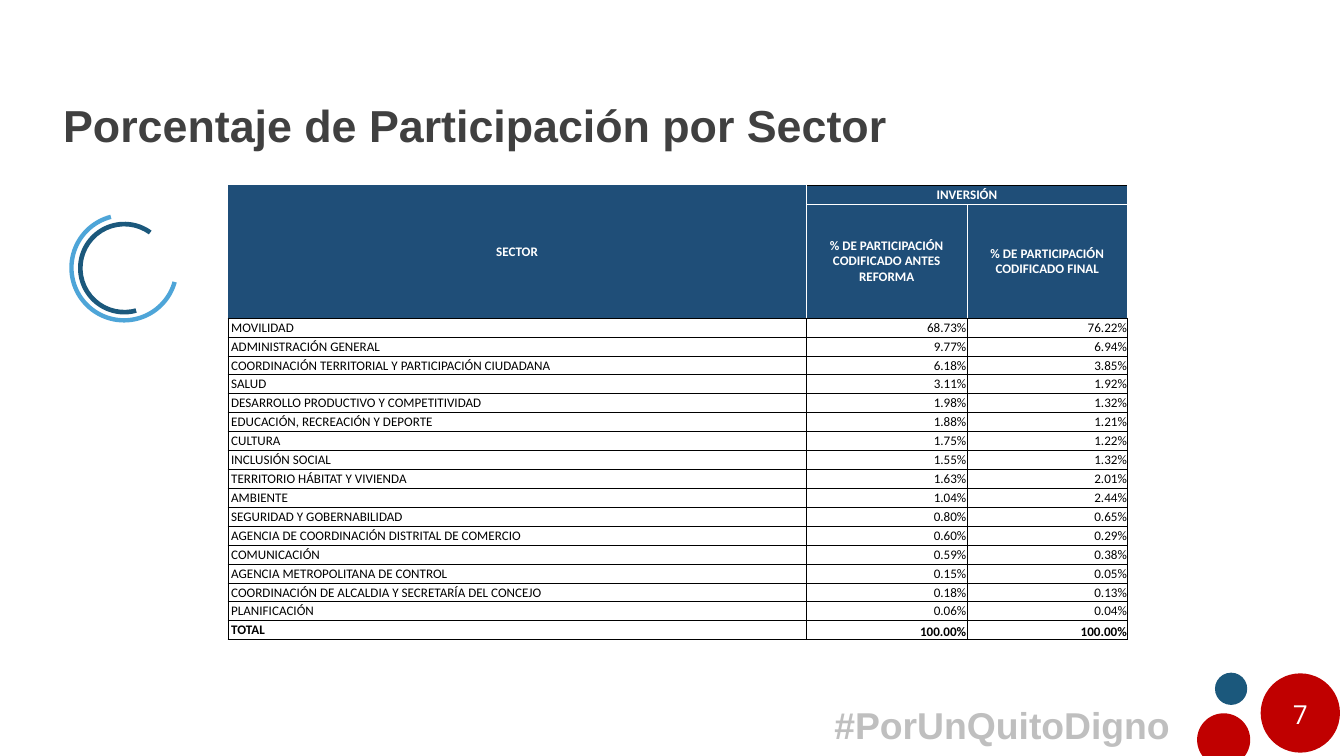
from dataclasses import dataclass
from math import asin, cos, pi, sin

from lxml.etree import SubElement
from pptx import Presentation
from pptx.dml.color import RGBColor
from pptx.enum.shapes import MSO_SHAPE
from pptx.enum.text import MSO_ANCHOR, MSO_AUTO_SIZE, PP_ALIGN
from pptx.oxml.ns import qn
from pptx.util import Inches, Pt


@dataclass(frozen=True)
class Theme:
    """Colours, fonts and type sizes of the deck."""
    navy: str = "1B587C"
    sky: str = "4EA5D8"
    red: str = "C00000"
    header: str = "1F4E78"
    white: str = "FFFFFF"
    black: str = "000000"
    heading: str = "404040"
    muted: str = "BFBFBF"
    display_font: str = "Arial"
    number_font: str = "Open Sans"
    table_font: str = "Calibri"
    title_size: int = 48
    slogan_size: int = 40
    number_size: int = 28
    table_size: int = 14
    rule_width: float = 0.5


COLUMNS, ROWS, UNIT = 80, 45, 0.25
SECTORS = [
    ("MOVILIDAD", 68.73, 76.22),
    ("ADMINISTRACIÓN GENERAL", 9.77, 6.94),
    ("COORDINACIÓN TERRITORIAL Y PARTICIPACIÓN CIUDADANA", 6.18, 3.85),
    ("SALUD", 3.11, 1.92),
    ("DESARROLLO PRODUCTIVO Y COMPETITIVIDAD", 1.98, 1.32),
    ("EDUCACIÓN, RECREACIÓN Y DEPORTE", 1.88, 1.21),
    ("CULTURA", 1.75, 1.22),
    ("INCLUSIÓN SOCIAL", 1.55, 1.32),
    ("TERRITORIO HÁBITAT Y VIVIENDA", 1.63, 2.01),
    ("AMBIENTE", 1.04, 2.44),
    ("SEGURIDAD Y GOBERNABILIDAD", 0.80, 0.65),
    ("AGENCIA DE COORDINACIÓN DISTRITAL DE COMERCIO", 0.60, 0.29),
    ("COMUNICACIÓN", 0.59, 0.38),
    ("AGENCIA METROPOLITANA DE CONTROL", 0.15, 0.05),
    ("COORDINACIÓN DE ALCALDIA Y SECRETARÍA DEL CONCEJO", 0.18, 0.13),
    ("PLANIFICACIÓN", 0.06, 0.04),
    ("TOTAL", 100, 100),
]
HEADINGS = [
    ["SECTOR", "INVERSIÓN", ""],
    ["", "% DE PARTICIPACIÓN CODIFICADO ANTES REFORMA",
     "% DE PARTICIPACIÓN CODIFICADO FINAL"],
]


def grid(length):
    """Convert grid units to slide lengths."""
    return Inches(length * UNIT)


def assign(target, values):
    """Set each attribute named in a dict of format values."""
    for name, value in values.items():
        setattr(target, name, value)


class SlideBuilder:
    """Draws styled elements on the current slide."""

    def __init__(self, slide, theme):
        self.slide, self.theme = slide, theme

    def text(self, frame, wording, font, size, color, bold=False, align=PP_ALIGN.LEFT):
        """Put one formatted paragraph in a text frame."""
        paragraph = frame.paragraphs[0]
        paragraph.alignment = align
        run = paragraph.add_run()
        run.text = wording
        assign(run.font, {"name": font, "size": Pt(size), "bold": bold})
        run.font.color.rgb = RGBColor.from_string(color)

    def frame(self, frame):
        """Give a text frame the common insets and anchor."""
        assign(frame, {
            "word_wrap": True, "auto_size": MSO_AUTO_SIZE.NONE,
            "vertical_anchor": MSO_ANCHOR.MIDDLE,
            "margin_left": grid(0.72), "margin_right": grid(0.72),
            "margin_top": grid(0.36), "margin_bottom": grid(0.36)})
        return frame

    def title(self, box, wording):
        """Fill and place the title placeholder."""
        heading = self.slide.shapes.title
        assign(heading, dict(zip(("left", "top", "width", "height"), map(grid, box))))
        self.text(self.frame(heading.text_frame), wording, self.theme.display_font,
                  self.theme.title_size, self.theme.heading, True)

    def label(self, box, wording, **style):
        """Add a text box."""
        label = self.slide.shapes.add_textbox(*map(grid, box))
        self.text(self.frame(label.text_frame), wording, **style)

    def paint(self, shape, color):
        """Apply a flat fill without outline or shadow."""
        shape.shadow.inherit = False
        shape.fill.solid()
        shape.fill.fore_color.rgb = RGBColor.from_string(color)
        shape.line.fill.background()

    def round_shape(self, kind, left, top, size, color, rotation=0, adjustments=()):
        """Add a circle or a ring segment."""
        shape = self.slide.shapes.add_shape(kind, *map(grid, (left, top, size, size)))
        shape.rotation = rotation
        for index, value in enumerate(adjustments):
            shape.adjustments[index] = value
        self.paint(shape, color)

    def cut_circle(self, x, y, radius, color, steps=72):
        """Add a circle cut off by the bottom edge of the slide."""
        dip = asin((ROWS - y) / radius)
        angles = [pi - dip + (pi + 2 * dip) * step / steps for step in range(steps + 1)]
        points = [(grid(x + radius * cos(a)), grid(y + radius * sin(a))) for a in angles]
        outline = self.slide.shapes.build_freeform(*points[0])
        outline.add_line_segments(points[1:], close=True)
        self.paint(outline.convert_to_shape(), color)

    def borders(self, cell, colors):
        """Draw the left, right, top and bottom cell borders."""
        properties = cell._tc.get_or_add_tcPr()
        for side, color in zip("LRTB", colors):
            line = SubElement(properties, qn(f"a:ln{side}"),
                              w=str(int(Pt(self.theme.rule_width))))
            if color:
                fill = SubElement(line, qn("a:solidFill"))
                SubElement(fill, qn("a:srgbClr"), val=color)
            else:
                SubElement(line, qn("a:noFill"))

    def cell(self, cell, wording, colors, fill=None, anchor=MSO_ANCHOR.MIDDLE,
             indent=0.04, **style):
        """Format and fill one table cell."""
        assign(cell, {
            "vertical_anchor": anchor, "margin_left": grid(indent),
            "margin_right": grid(0.04), "margin_top": grid(0.04), "margin_bottom": 0})
        self.borders(cell, colors)
        if fill:
            cell.fill.solid()
            cell.fill.fore_color.rgb = RGBColor.from_string(fill)
        else:
            cell.fill.background()
        self.text(cell.text_frame, wording, self.theme.table_font,
                  self.theme.table_size, **style)

    def sector_table(self, box, widths, tall_row):
        """Add the table of shares by sector."""
        theme = self.theme
        count = len(HEADINGS) + len(SECTORS)
        table = self.slide.shapes.add_table(count, len(widths), *map(grid, box)).table
        assign(table, {"first_row": False, "horz_banding": False})
        for column, width in zip(table.columns, widths):
            column.width = grid(width)
        for index, row in enumerate(table.rows):
            row.height = grid(tall_row if index == 1 else (box[3] - tall_row) / (count - 1))
        table.cell(0, 0).merge(table.cell(1, 0))
        table.cell(0, 1).merge(table.cell(0, 2))
        for r, headings in enumerate(HEADINGS):
            for c, heading in enumerate(headings):
                colors = (theme.white if c else None, theme.white,
                          (theme.white if r else theme.black) if c else None,
                          theme.white if c and r == 0 else theme.black)
                self.cell(table.cell(r, c), heading, colors, theme.header,
                          color=theme.white, bold=True, align=PP_ALIGN.CENTER)
        for r, (sector, *shares) in enumerate(SECTORS, len(HEADINGS)):
            total = sector == "TOTAL"
            style = {"colors": [theme.black] * 4, "color": theme.black, "bold": total}
            self.cell(table.cell(r, 0), sector, indent=0.2, **style)
            for c, share in enumerate(shares, 1):
                self.cell(table.cell(r, c), f"{share:.2f}%", align=PP_ALIGN.RIGHT,
                          anchor=MSO_ANCHOR.BOTTOM if total else MSO_ANCHOR.MIDDLE, **style)


def main():
    """Build and save the slide."""
    deck = Presentation()
    assign(deck, {"slide_width": grid(COLUMNS), "slide_height": grid(ROWS)})
    theme = Theme()
    page = SlideBuilder(deck.slides.add_slide(deck.slide_layouts[5]), theme)
    page.round_shape(MSO_SHAPE.OVAL, 72.32, 40.04, 1.92, theme.navy)
    page.round_shape(MSO_SHAPE.OVAL, 75.04, 40.08, 4.72, theme.red)
    page.cut_circle(72.84, 44.04, 1.58, theme.red)
    page.round_shape(MSO_SHAPE.BLOCK_ARC, 4.12, 12.68, 6.52, theme.sky, 60,
                     (189.41, 117.33, 0.04))
    page.round_shape(MSO_SHAPE.BLOCK_ARC, 4.64, 13.2, 5.52, theme.navy, 110.3,
                     (194.52, 117.42, 0.05))
    page.label((75.04, 41.28, 4.72, 2.4), "7", font=theme.number_font,
               size=theme.number_size, color=theme.white, align=PP_ALIGN.CENTER)
    page.label((45.04, 41.92, 25.32, 2.4), "#PorUnQuitoDigno", font=theme.display_font,
               size=theme.slogan_size, color=theme.muted, bold=True, align=PP_ALIGN.RIGHT)
    page.title((3.04, 4.76, 72, 5.28), "Porcentaje de Participación por Sector")
    page.sector_table((13.56, 11.04, 53.56, 27.04), (34.44, 9.56, 9.56), 6.76)
    deck.save("out.pptx")


if __name__ == "__main__":
    main()
